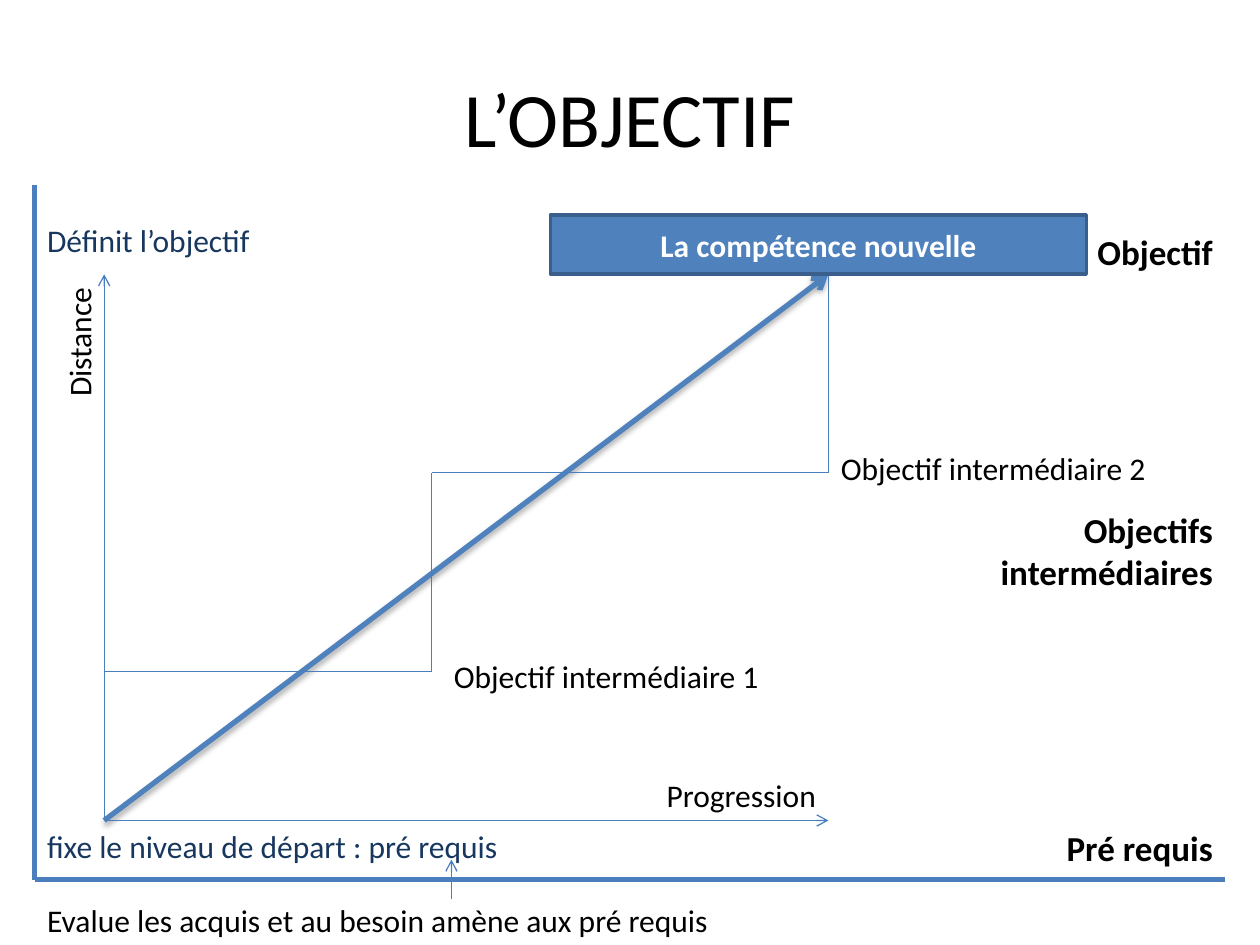
from dataclasses import dataclass

from lxml import etree
from pptx import Presentation
from pptx import util as u
from pptx.dml.color import RGBColor
from pptx.enum import shapes, text
from pptx.oxml.ns import qn

BLUE, EDGE, NAVY = "4F81BD", "4B7EBC", "17375E"
BLACK, WHITE = "000000", "FFFFFF"
LEFT, RIGHT, CENTER = text.PP_ALIGN.LEFT, text.PP_ALIGN.RIGHT, text.PP_ALIGN.CENTER

# Lengths in centimetres
FRAME_X, FRAME_RIGHT, FRAME_TOP, FRAME_Y = 0.7, 24.7, 3.73, 17.73
START_X, START_Y = 2.1, 16.54
GOAL_X, GOAL_Y = 16.7, 5.53
STEP_X, STEP_HEIGHT = 8.7, 4
LABEL_HEIGHT = 1.03


@dataclass
class Line:
    start: tuple[float, float]
    end: tuple[float, float]
    width: float = 0.75
    color: str = EDGE
    arrow: bool = False
    shadow: bool = False


@dataclass
class Label:
    words: str
    left: float
    top: float
    width: float
    height: float = LABEL_HEIGHT
    size: int = 18
    color: str = BLACK
    bold: bool = False
    align: text.PP_ALIGN = LEFT
    rotation: int = 0


def rgb(value: str) -> RGBColor:
    return RGBColor.from_string(value)


def write(frame, words: str, *, size: int = 18, color: str = BLACK, bold: bool = False,
          align=LEFT, anchor=text.MSO_ANCHOR.TOP) -> None:
    frame.word_wrap = True
    frame.vertical_anchor = anchor
    para = frame.paragraphs[0]
    para.alignment = align
    span = para.add_run()
    span.text = words
    span.font.name = "Calibri"
    span.font.size = u.Pt(size)
    span.font.bold = bold
    span.font.color.rgb = rgb(color)


def draw_line(page, line: Line) -> None:
    ends = [u.Cm(value) for value in (*line.start, *line.end)]
    connector = page.shapes.add_connector(shapes.MSO_CONNECTOR.STRAIGHT, *ends)
    connector.line.width = u.Pt(line.width)
    connector.line.color.rgb = rgb(line.color)
    properties = connector._element.spPr
    if line.arrow:
        etree.SubElement(properties.find(qn("a:ln")), qn("a:tailEnd"), type="arrow")
    effects = etree.SubElement(properties, qn("a:effectLst"))
    if line.shadow:
        outer = etree.SubElement(effects, qn("a:outerShdw"), blurRad="40000",
                                 dist="23000", dir="5400000", rotWithShape="0")
        tint = etree.SubElement(outer, qn("a:srgbClr"), val=BLACK)
        etree.SubElement(tint, qn("a:alpha"), val="35000")


def draw_label(page, label: Label) -> None:
    box = page.shapes.add_textbox(u.Cm(label.left), u.Cm(label.top),
                                  u.Cm(label.width), u.Cm(label.height))
    box.rotation = label.rotation
    write(box.text_frame, label.words, size=label.size, color=label.color,
          bold=label.bold, align=label.align)


def draw_goal(page) -> None:
    box = page.shapes.add_shape(shapes.MSO_SHAPE.RECTANGLE, u.Cm(11.1), u.Cm(4.33),
                                u.Cm(10.8), u.Cm(1.2))
    box.shadow.inherit = False
    box.fill.solid()
    box.fill.fore_color.rgb = rgb(BLUE)
    box.line.color.rgb = rgb("3A5F8C")
    box.line.width = u.Pt(2)
    write(box.text_frame, "La compétence nouvelle", color=WHITE, bold=True,
          align=CENTER, anchor=text.MSO_ANCHOR.MIDDLE)


def staircase() -> list[Line]:
    low, middle = GOAL_Y + 2 * STEP_HEIGHT, GOAL_Y + STEP_HEIGHT
    corners = [(START_X, low), (STEP_X, low), (STEP_X, middle),
               (GOAL_X, middle), (GOAL_X, GOAL_Y)]
    return [Line(start, end) for start, end in zip(corners, corners[1:])]


def heading(words: str, left: float, top: float, height: float = 1.11) -> Label:
    """Bold level name, flush with the right end of the frame."""
    return Label(words, left, top, FRAME_RIGHT - left, height, size=20, bold=True, align=RIGHT)


LINES = [
    Line((FRAME_X, FRAME_Y), (FRAME_RIGHT, FRAME_Y), width=3),
    Line((FRAME_X, FRAME_Y), (FRAME_X, FRAME_TOP), width=3),
    Line((START_X, START_Y), (GOAL_X, GOAL_Y), width=3, color=BLUE, arrow=True, shadow=True),
    Line((START_X, START_Y), (GOAL_X, START_Y), arrow=True),
    Line((START_X, START_Y), (START_X, GOAL_Y), arrow=True),
    Line((9.1, 18.13), (9.1, 17.33), arrow=True),
    *staircase(),
]

LABELS = [
    heading("Pré requis", 15.9, START_Y),
    heading("Objectifs intermédiaires", 17.5, 10.13, height=1.96),
    heading("Objectif", 15.9, 4.53),
    Label("Progression", 11.7, START_Y - LABEL_HEIGHT, 5, align=RIGHT),
    Label("Distance", -0.9, 7.53, 5, align=RIGHT, rotation=270),
    Label("Définit l’objectif", FRAME_X, 4.33, 10.4, color=NAVY),
    Label("fixe le niveau de départ : pré requis", FRAME_X, START_Y, 14, color=NAVY),
    Label("Evalue les acquis et au besoin amène aux pré requis", FRAME_X, 18.03, 14.2),
    Label("Objectif intermédiaire 1", 8.9, 13.13, 7.2),
    Label("Objectif intermédiaire 2", GOAL_X, 8.93, 7.2),
]


def main() -> None:
    deck = Presentation()
    deck.slide_width, deck.slide_height = u.Cm(25.4), u.Cm(19.05)
    page = deck.slides.add_slide(deck.slide_layouts[5])
    title = page.shapes.title
    title.left, title.top = u.Cm(1.27), u.Cm(0.76)
    title.width, title.height = u.Cm(22.86), u.Cm(3.18)
    write(title.text_frame, "L’OBJECTIF", size=44, align=CENTER, anchor=text.MSO_ANCHOR.MIDDLE)
    for line in LINES:
        draw_line(page, line)
    draw_goal(page)
    for label in LABELS:
        draw_label(page, label)
    deck.save("out.pptx")


if __name__ == "__main__":
    main()
